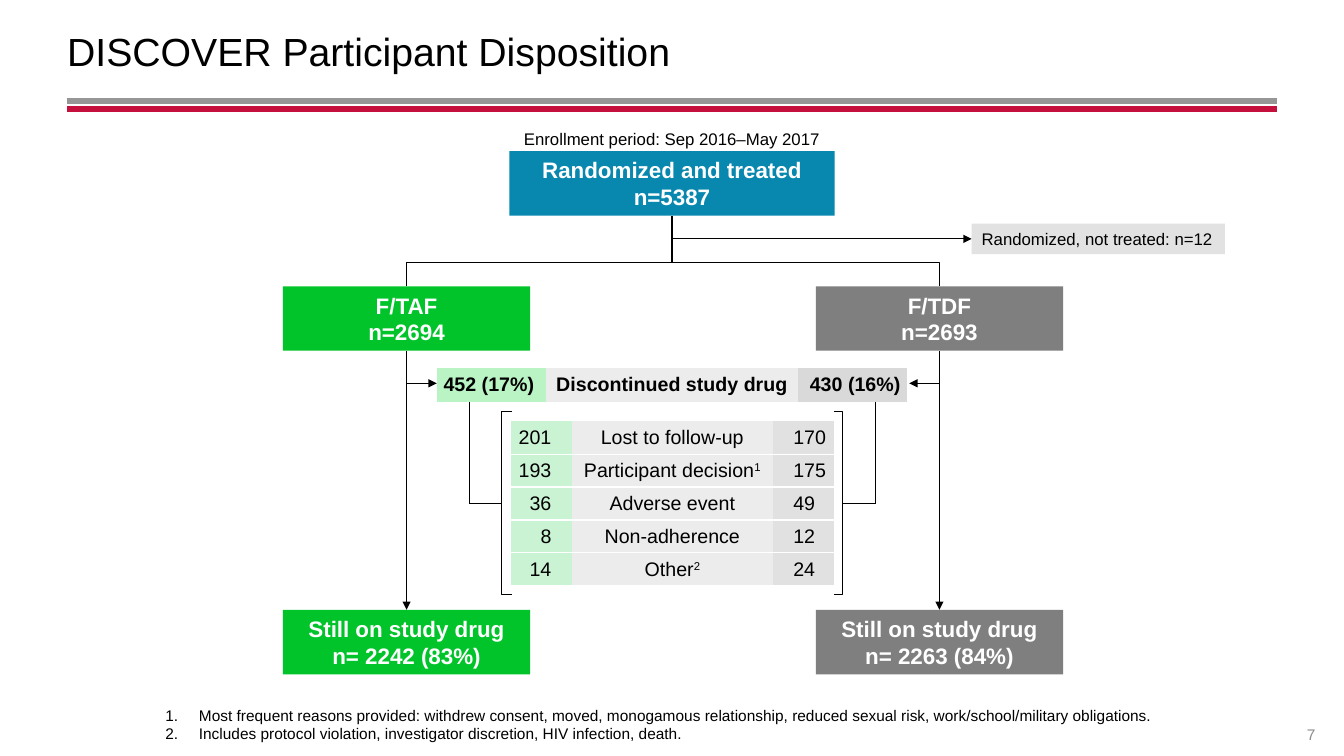
"""Build the DISCOVER participant disposition flow chart slide."""
import pptx
import pptx.dml.color
import pptx.enum.shapes
import pptx.enum.text
import pptx.oxml
import pptx.oxml.ns
import pptx.util

RGBColor = pptx.dml.color.RGBColor
BLACK = RGBColor(0x00, 0x00, 0x00)
WHITE = RGBColor(0xFF, 0xFF, 0xFF)
RULE_GRAY = RGBColor(0x96, 0x96, 0x96)
RULE_RED = RGBColor(0xC5, 0x0F, 0x3C)
NUMBER_GRAY = RGBColor(0x8C, 0x8C, 0x8C)
BLUE = RGBColor(0x09, 0x88, 0xAF)
GREEN = RGBColor(0x00, 0xC4, 0x2A)
GRAY = RGBColor(0x7F, 0x7F, 0x7F)
NOTE_GRAY = RGBColor(0xE2, 0xE2, 0xE2)
LABEL_GRAY = RGBColor(0xEC, 0xEC, 0xEC)
STRIP_GREEN = RGBColor(0xBA, 0xF4, 0xC4)
STRIP_GRAY = RGBColor(0xD9, 0xD9, 0xD9)
PALE_GREEN = RGBColor(0xC9, 0xF3, 0xD2)
PALE_GRAY = RGBColor(0xE1, 0xE1, 0xE1)

WIDTH, HEIGHT = pptx.util.Inches(13.33), pptx.util.Inches(7.5)
LEFT, CENTER, RIGHT = (pptx.enum.text.PP_ALIGN.LEFT, pptx.enum.text.PP_ALIGN.CENTER,
                       pptx.enum.text.PP_ALIGN.RIGHT)
MIDDLE, BOTTOM = pptx.enum.text.MSO_ANCHOR.MIDDLE, pptx.enum.text.MSO_ANCHOR.BOTTOM
NO_STYLE = "{2D5ABB26-0587-4C30-8999-92F81FD0307C}"

TRUNK, TAF, TDF = 50, 30.25, 69.9
ARM_TOP, REMAIN_TOP, BOX_HEIGHT = 37.87, 80.67, 8.53
ARM_WIDTH, TOP_WIDTH = 18.4, 24.2
STRIP_TOP, STRIP_HEIGHT = 48.67, 4.53
BRACKET_TOP, BRACKET_BOTTOM, BRACKET_MIDDLE = 54.5, 78.7, 66.6

REASONS = [("201", "Lost to follow-up", "", "170"),
           ("193", "Participant decision", "1", "175"),
           ("36", "Adverse event", "", "49"),
           ("8", "Non-adherence", "", "12"),
           ("14", "Other", "2", "24")]
FOOTNOTES = [
    "Most frequent reasons provided: withdrew consent, moved, monogamous relationship, "
    "reduced sexual risk, work/school/military obligations.",
    "Includes protocol violation, investigator discretion, HIV infection, death."]


def across(share):
    """Turn a percentage of the slide width into a length."""
    return round(WIDTH * share / 100)


def down(share):
    """Turn a percentage of the slide height into a length."""
    return round(HEIGHT * share / 100)


def area(left, top, width, height):
    """Turn four percentages into left, top, width and height lengths."""
    return across(left), down(top), across(width), down(height)


def new_xml(tag, **attributes):
    """Create a drawing element with the given attributes."""
    element = pptx.oxml.parse_xml(f'<a:{tag} {pptx.oxml.ns.nsdecls("a")}/>')
    for name, value in attributes.items():
        element.set(name, value)
    return element


def format_text(frame, size, color=BLACK, bold=False, align=LEFT):
    """Format every paragraph and run of a text frame."""
    for para in frame.paragraphs:
        para.alignment = align
        for span in para.runs:
            span.font.name = "Arial"
            span.font.size = pptx.util.Pt(size)
            span.font.bold = bold
            span.font.color.rgb = color


def set_insets(holder, left, top, right, bottom):
    """Set the margins of a text frame or table cell in inches."""
    holder.margin_left, holder.margin_top, holder.margin_right, holder.margin_bottom = (
        pptx.util.Inches(inset) for inset in (left, top, right, bottom))


def add_box(page, place, text, fill, size=16, color=WHITE, bold=True, align=CENTER):
    """Add a filled rectangle with text."""
    box = page.shapes.add_shape(pptx.enum.shapes.MSO_SHAPE.RECTANGLE, *area(*place))
    box.shadow.inherit = False
    box.fill.solid()
    box.fill.fore_color.rgb = fill
    box.line.fill.background()
    box.text_frame.text = text
    box.text_frame.vertical_anchor = MIDDLE
    format_text(box.text_frame, size, color, bold, align)
    return box


def add_label(page, place, text, size, color, anchor):
    """Add a centred text box without margins."""
    box = page.shapes.add_textbox(*area(*place))
    frame = box.text_frame
    frame.word_wrap = True
    frame.text = text
    frame.vertical_anchor = anchor
    set_insets(frame, 0, 0, 0, 0.05 if anchor == BOTTOM else 0)
    format_text(frame, size, color, align=CENTER)


def add_line(page, start, end, color=BLACK, weight=0.75, arrow=False, joins=(None, None),
             kind=pptx.enum.shapes.MSO_CONNECTOR.STRAIGHT):
    """Add a connector, optionally with an arrowhead and joined boxes."""
    line = page.shapes.add_connector(kind, across(start[0]), down(start[1]),
                                     across(end[0]), down(end[1]))
    for join, connect in zip(joins, (line.begin_connect, line.end_connect)):
        if join:
            connect(*join)
    line.line.color.rgb = color
    line.line.width = pptx.util.Pt(weight)
    if arrow:
        line.line._get_or_add_ln().append(new_xml("tailEnd", type="triangle"))
    line._element.spPr.append(new_xml("effectLst"))
    return line


def add_branch(page, parent, child, center):
    """Add an elbow that leaves the parent downwards and enters the child from above."""
    top = 20 + BOX_HEIGHT
    line = add_line(page, (TRUNK, top), (center, ARM_TOP), joins=((parent, 2), (child, 0)),
                    kind=pptx.enum.shapes.MSO_CONNECTOR.ELBOW)
    span, drop = across(abs(center - TRUNK)), down(ARM_TOP - top)
    line.left = across((TRUNK + center) / 2) - drop // 2
    line.top = down((top + ARM_TOP) / 2) - span // 2
    line.width, line.height = drop, span
    frame = line._element.spPr.xfrm
    frame.set("rot", str((90 if center < TRUNK else 270) * 60000))
    frame.set("flipH", "0" if center < TRUNK else "1")
    geometry = line._element.spPr.find(pptx.oxml.ns.qn("a:prstGeom"))
    geometry.get_or_add_avLst().append(new_xml("gd", name="adj1", fmla="val 66800"))


def add_bracket(page, spine, tip):
    """Add an open square bracket beside the reasons."""
    builder = page.shapes.build_freeform(across(tip), down(BRACKET_TOP))
    builder.add_line_segments([(across(spine), down(BRACKET_TOP)),
                               (across(spine), down(BRACKET_BOTTOM)),
                               (across(tip), down(BRACKET_BOTTOM))], close=False)
    bracket = builder.convert_to_shape()
    bracket.shadow.inherit = False
    bracket.fill.background()
    bracket.line.color.rgb = BLACK
    bracket.line.width = pptx.util.Pt(0.75)


def add_grid(page, left, top, widths, row_height, rows, fills, insets, aligns, bold=False):
    """Add a table of (text, superscript) cells with column-wise formatting."""
    table = page.shapes.add_table(len(rows), len(widths), *area(
        left, top, sum(widths), row_height * len(rows))).table
    table.first_row = table.horz_banding = False
    table._tbl.tblPr.find(pptx.oxml.ns.qn("a:tableStyleId")).text = NO_STYLE
    for column, width in zip(table.columns, widths):
        column.width = across(width)
    for row, entries in zip(table.rows, rows):
        row.height = down(row_height)
        for cell, (text, mark), fill, inset, align in zip(row.cells, entries, fills,
                                                          insets, aligns):
            cell.text_frame.text = text
            if mark:
                span = cell.text_frame.paragraphs[0].add_run()
                span.text = mark
                span._r.get_or_add_rPr().set("baseline", "30000")
            format_text(cell.text_frame, 14, bold=bold, align=align)
            set_insets(cell, *inset)
            cell.vertical_anchor = MIDDLE
            cell.fill.solid()
            cell.fill.fore_color.rgb = fill
            if len(rows) > 1:
                border = new_xml("lnB", w="12700")
                border.append(new_xml("solidFill"))
                border[0].append(new_xml("srgbClr", val=str(WHITE)))
                cell._tc.get_or_add_tcPr().insert(0, border)


def fill_placeholder(holder, place, lines, size, anchor):
    """Move a placeholder, then write and format its lines."""
    holder.left, holder.top, holder.width, holder.height = area(*place)
    frame = holder.text_frame
    frame.text = "\n".join(lines)
    frame.auto_size = pptx.enum.text.MSO_AUTO_SIZE.NONE
    frame.vertical_anchor = anchor
    set_insets(frame, 0, 0.05, 0, 0.05)
    format_text(frame, size)


def add_footnotes(page):
    """Write the numbered footnotes in the body placeholder."""
    body = page.placeholders[1]
    fill_placeholder(body, (12.3, 92.67, 75.4, 6.27), FOOTNOTES, 11, BOTTOM)
    for para in body.text_frame.paragraphs:
        para.space_before = pptx.util.Pt(0)
        properties = para._p.get_or_add_pPr()
        properties.set("marL", str(across(2.5)))
        properties.set("indent", str(-across(2.5)))
        properties.append(new_xml("buFont", typeface="+mj-lt"))
        properties.append(new_xml("buAutoNum", type="arabicPeriod"))


def add_flow(page):
    """Add the boxes of the flow and the lines between them."""
    top_box = add_box(page, (TRUNK - TOP_WIDTH / 2, 20, TOP_WIDTH, BOX_HEIGHT),
                      "Randomized and treated n=5387", BLUE)
    untreated = add_box(page, (72.3, 29.57, 18.85, 4.06), "Randomized, not treated: n=12",
                        NOTE_GRAY, 12, BLACK, False, LEFT)
    untreated.text_frame.word_wrap = False
    add_line(page, (TRUNK, 31.6), (72.3, 31.6), arrow=True, joins=(None, (untreated, 1)))
    arms = [(TAF, GREEN, "F/TAF\nn=2694", "n= 2242 (83%)", 32.5, 34.9, 37.3, 38.1),
            (TDF, GRAY, "F/TDF\nn=2693", "n= 2263 (84%)", 67.65, 65.15, 62.7, 62.05)]
    for center, fill, name, remaining, strip_edge, stem, spine, tip in arms:
        left = center - ARM_WIDTH / 2
        arm = add_box(page, (left, ARM_TOP, ARM_WIDTH, BOX_HEIGHT), name, fill)
        remain = add_box(page, (left, REMAIN_TOP, ARM_WIDTH, BOX_HEIGHT),
                         "Still on study drug\n" + remaining, fill)
        add_branch(page, top_box, arm, center)
        add_line(page, (center, ARM_TOP + BOX_HEIGHT), (center, REMAIN_TOP), arrow=True,
                 joins=((arm, 2), (remain, 0)))
        add_line(page, (center, 50.7), (strip_edge, 50.7), arrow=True)
        add_line(page, (stem, STRIP_TOP + STRIP_HEIGHT), (stem, BRACKET_MIDDLE))
        add_line(page, (stem, BRACKET_MIDDLE), (spine, BRACKET_MIDDLE))
        add_bracket(page, spine, tip)


def main():
    """Build and save the slide."""
    deck = pptx.Presentation()
    deck.slide_width, deck.slide_height = WIDTH, HEIGHT
    page = deck.slides.add_slide(deck.slide_layouts[1])
    fill_placeholder(page.shapes.title, (5, 1.2, 90, 10.93),
                     ["DISCOVER Participant Disposition"], 28, MIDDLE)
    for height, color in ((13.33, RULE_GRAY), (14.4, RULE_RED)):
        add_line(page, (5, height), (95, height), color, 4.25)
    add_footnotes(page)
    add_label(page, (37.9, 17.2, TOP_WIDTH, 2.4), "Enrollment period: Sep 2016–May 2017",
              12, BLACK, MIDDLE)
    add_label(page, (96, 93.73, 3.1, 5.33), "7", 11, NUMBER_GRAY, BOTTOM)
    add_flow(page)
    add_grid(page, 32.5, STRIP_TOP, (8.13, 18.75, 8.13), STRIP_HEIGHT,
             [[("452 (17%)", ""), ("Discontinued study drug", ""), ("430 (16%)", "")]],
             (STRIP_GREEN, LABEL_GRAY, STRIP_GRAY),
             ((0.05, 0.02, 0.1, 0.02), (0.05, 0.02, 0.05, 0.02), (0.1, 0.02, 0.05, 0.02)),
             (CENTER, CENTER, CENTER), bold=True)
    add_grid(page, 38.03, 55.73, (4.5, 15, 4.5), 4.35,
             [[(taf, ""), (reason, mark), (tdf, "")] for taf, reason, mark, tdf in REASONS],
             (PALE_GREEN, LABEL_GRAY, PALE_GRAY),
             ((0.05, 0.02, 0.2, 0.02), (0, 0.02, 0, 0.02), (0.2, 0.02, 0.05, 0.02)),
             (RIGHT, CENTER, LEFT))
    deck.save("out.pptx")


if __name__ == "__main__":
    main()
